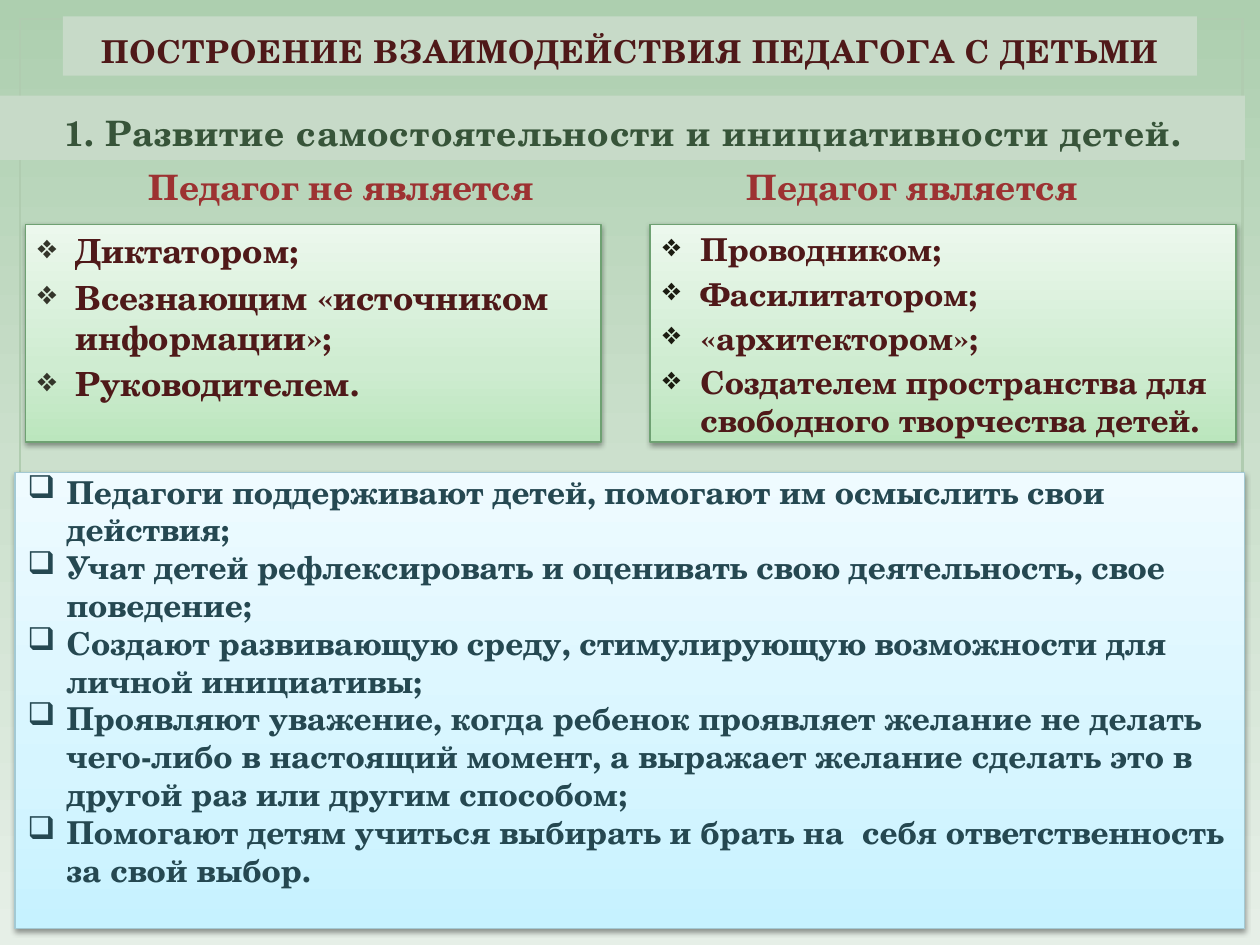
from lxml.etree import SubElement
from pptx import Presentation
from pptx.dml.color import RGBColor as RGB
from pptx.enum.shapes import MSO_SHAPE as SHAPE
from pptx.enum.text import MSO_ANCHOR as ANCHOR, PP_ALIGN as ALIGN
from pptx.oxml.ns import qn
from pptx.util import Inches, Pt

# Content
TITLE = "ПОСТРОЕНИЕ ВЗАИМОДЕЙСТВИЯ ПЕДАГОГА С ДЕТЬМИ"
SUBTITLE = "1. Развитие самостоятельности и инициативности детей."
COLUMNS = [
    dict(head="Педагог не является", head_box=(0.5, 1.26, 4.42, 0.44),
         box=(0.2, 1.78, 4.57, 1.73), size=19, bullet_color="34352A",
         items=["Диктатором;", "Всезнающим «источником информации»;",
                "Руководителем."]),
    dict(head="Педагог является", head_box=(5.03, 1.26, 4.42, 0.44),
         box=(5.16, 1.78, 4.65, 1.73), size=18, bullet_color="1C1C11",
         items=["Проводником;", "Фасилитатором;", "«архитектором»;",
                "Создателем пространства для свободного творчества детей."]),
]
PRACTICES = [
    "Педагоги поддерживают детей, помогают им осмыслить свои действия;",
    "Учат детей рефлексировать и оценивать свою деятельность, свое поведение;",
    "Создают развивающую среду, стимулирующую возможности для личной инициативы;",
    "Проявляют уважение, когда ребенок проявляет желание не делать чего-либо "
    "в настоящий момент, а выражает желание сделать это в другой раз или "
    "другим способом;",
    "Помогают детям учиться выбирать и брать на  себя ответственность за свой выбор.",
]

THEME = dict(
    font="TeX Gyre Schola",
    title=18, heading=20, body=18,
    maroon="4F1919", red="9D3232", green="375439", teal="254851",
    band="C7DAC8", frame="B0CCB0", green_line="6EA172", blue_line="A3C9D3",
    page=[(0, "ADCFAF"), (50, "CCE0CD"), (100, "E6EFE7")],
    green_fill=[(0, "BBE6BD"), (35, "CFECD1"), (100, "ECF8ED")],
    blue_fill=[(0, "C6F2FF"), (35, "D6F5FF"), (100, "EFFBFF")],
)


def add_el(parent, tag, **attrs):
    return SubElement(parent, qn(tag), {k: str(v) for k, v in attrs.items()})


def set_gradient(fill, owner, stops, angle):
    """Fill with any number of (percent, colour) stops."""
    fill.gradient()
    grad = next(owner.iter(qn("a:gradFill")))
    stop_list = grad.find(qn("a:gsLst"))
    for old in list(stop_list):
        stop_list.remove(old)
    for pos, color in stops:
        add_el(add_el(stop_list, "a:gs", pos=pos * 1000), "a:srgbClr", val=color)
    grad.find(qn("a:lin")).set("ang", str(angle * 60000))


def add_shadow(sp):
    effects = sp.element.spPr.find(qn("a:effectLst"))
    shadow = add_el(effects, "a:outerShdw", blurRad=Pt(3.1), dist=Pt(1.6),
                    dir=90 * 60000, rotWithShape=0)
    add_el(add_el(shadow, "a:srgbClr", val="000000"), "a:alpha", val=38000)


def add_box(s, box, fill=None, line=None, width=0.75):
    """Rectangle with a plain colour, a list of gradient stops, or no fill."""
    sp = s.shapes.add_shape(SHAPE.RECTANGLE, *map(Inches, box))
    sp.shadow.inherit = False
    if fill is None:
        sp.fill.background()
    elif isinstance(fill, str):
        sp.fill.solid()
        sp.fill.fore_color.rgb = RGB.from_string(fill)
    else:
        set_gradient(sp.fill, sp.element, fill, 270)
        add_shadow(sp)
    if line:
        sp.line.color.rgb = RGB.from_string(line)
        sp.line.width = Pt(width)
    else:
        sp.line.fill.background()
    return sp


def add_text(sp, lines, *, size, color, align=ALIGN.LEFT, anchor=ANCHOR.BOTTOM,
             before=0, bullet=None, bullet_color=None, indent=0.3,
             outline=None, bottom=0.05):
    tf = sp.text_frame
    tf.word_wrap = True
    tf.vertical_anchor = anchor
    tf.margin_bottom = Inches(bottom)
    for i, text in enumerate(lines):
        p = tf.paragraphs[0] if i == 0 else tf.add_paragraph()
        p.alignment = align
        p.space_before = Pt(before)
        if bullet:
            pPr = p._p.get_or_add_pPr()
            pPr.set("marL", str(Inches(indent)))
            pPr.set("indent", str(-Inches(indent)))
            add_el(add_el(pPr, "a:buClr"), "a:srgbClr", val=bullet_color or color)
            add_el(pPr, "a:buChar", char=bullet)
        r = p.add_run()
        r.text = text
        r.font.name, r.font.size, r.font.bold = THEME["font"], Pt(size), True
        r.font.color.rgb = RGB.from_string(color)
        if outline:
            rPr = r.font._element if hasattr(r.font, "_element") else r._r.rPr
            rPr.set("spc", "50")
            ln = add_el(rPr, "a:ln", w=Pt(1.05))
            add_el(add_el(ln, "a:solidFill"), "a:srgbClr", val=outline)
            rPr.insert(0, ln)


prs = Presentation()
prs.slide_width, prs.slide_height = Inches(10), Inches(7.5)
s = prs.slides.add_slide(prs.slide_layouts[6])

# Background and frame
set_gradient(s.background.fill, s.element, THEME["page"], 90)
add_box(s, (0.16, 0.15, 9.7, 7.2), line=THEME["frame"], width=1.5)

# Title and subtitle bands
for text, box, size, color in [
    (TITLE, (0.5, 0.13, 9, 0.47), THEME["title"], THEME["maroon"]),
    (SUBTITLE, (0, 0.76, 9.88, 0.51), THEME["heading"], THEME["green"]),
]:
    add_text(add_box(s, box, THEME["band"]), [text], size=size, color=color,
             align=ALIGN.CENTER, outline=THEME["green"])

# Two compared columns
for col in COLUMNS:
    heading = s.shapes.add_textbox(*map(Inches, col["head_box"]))
    add_text(heading, [col["head"]], size=THEME["heading"], color=THEME["red"],
             align=ALIGN.CENTER, before=4)
    card = add_box(s, col["box"], THEME["green_fill"], THEME["green_line"])
    add_text(card, col["items"], size=col["size"], color=THEME["maroon"],
             anchor=ANCHOR.TOP, before=round(col["size"] * 0.2, 1),
             bullet="❖", bullet_color=col["bullet_color"])

# Practices panel
panel = add_box(s, (0.12, 3.75, 9.76, 3.62), THEME["blue_fill"], THEME["blue_line"])
add_text(panel, PRACTICES, size=THEME["body"], color=THEME["teal"],
         bullet="❑", indent=0.31, bottom=0.32)

prs.save("out.pptx")
